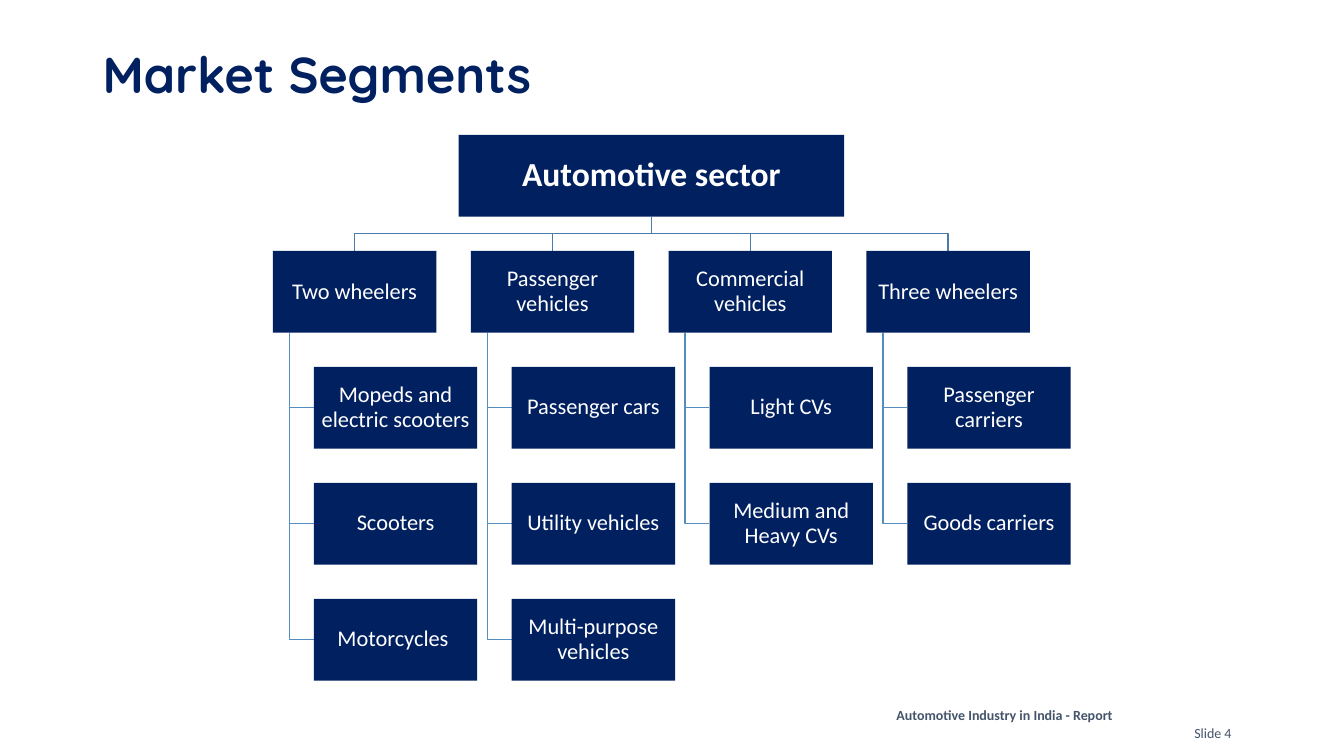
import pptx
import pptx.dml.color
import pptx.enum.shapes
import pptx.enum.text
import pptx.util

Pt = pptx.util.Pt
RGBColor = pptx.dml.color.RGBColor
ALIGN = pptx.enum.text.PP_ALIGN
ANCHOR = pptx.enum.text.MSO_ANCHOR

NAVY = RGBColor(0x00, 0x20, 0x60)
SLATE = RGBColor(0x44, 0x54, 0x6A)
WHITE = RGBColor(0xFF, 0xFF, 0xFF)
SECTOR_LINE = RGBColor(0x49, 0x7C, 0xAB)
SEGMENT_LINE = RGBColor(0x53, 0x8D, 0xC1)

SECTOR_WIDTH = 275.5
BOX_WIDTH = 116.7
BOX_HEIGHT = 58.3
FIRST_LEFT = 195
FIRST_TOP = 96.4
COLUMN_PITCH = 141.3
ROW_PITCH = 82.85
CHILD_INDENT = 29.2
TRUNK_INDENT = 11.7

SEGMENTS = [
    ("Two wheelers", ["Mopeds and electric scooters", "Scooters", "Motorcycles "]),
    ("Passenger vehicles", ["Passenger cars", "Utility vehicles", "Multi-purpose vehicles"]),
    ("Commercial vehicles", ["Light CVs", "Medium and Heavy CVs"]),
    ("Three wheelers", ["Passenger carriers", "Goods carriers"]),
]


def write(frame, text, size, color, bold=False, align=ALIGN.LEFT, font="Calibri", spacing=None):
    paragraph = frame.paragraphs[0]
    paragraph.alignment = align
    paragraph.line_spacing = spacing
    run = paragraph.add_run()
    run.text = text
    run.font.name = font
    run.font.size = Pt(size)
    run.font.bold = bold
    run.font.color.rgb = color


def add_label(slide, left, top, width, height, wrap=True):
    frame = slide.shapes.add_textbox(Pt(left), Pt(top), Pt(width), Pt(height)).text_frame
    frame.word_wrap = wrap
    return frame


def add_box(slide, left, top, width, text, size=16, bold=False, inset=0.8):
    box = slide.shapes.add_shape(
        pptx.enum.shapes.MSO_SHAPE.RECTANGLE, Pt(left), Pt(top), Pt(width), Pt(BOX_HEIGHT))
    box.shadow.inherit = False
    box.fill.solid()
    box.fill.fore_color.rgb = NAVY
    box.line.fill.background()
    frame = box.text_frame
    frame.word_wrap = True
    frame.vertical_anchor = ANCHOR.MIDDLE
    frame.margin_left = frame.margin_right = Pt(inset)
    frame.margin_top = frame.margin_bottom = Pt(inset)
    write(frame, text, size, WHITE, bold, ALIGN.CENTER, spacing=0.9)


def add_branch(slide, points, color):
    start, *rest = [(Pt(x), Pt(y)) for x, y in points]
    builder = slide.shapes.build_freeform(*start)
    builder.add_line_segments(rest, close=False)
    branch = builder.convert_to_shape()
    branch.shadow.inherit = False
    branch.fill.background()
    branch.line.color.rgb = color
    branch.line.width = Pt(1)


def row_top(row):
    return FIRST_TOP + row * ROW_PITCH


def add_segment(slide, left, sector_center, segment, children):
    sector_bottom = FIRST_TOP + BOX_HEIGHT
    top = row_top(1)
    middle = (sector_bottom + top) / 2
    center = left + BOX_WIDTH / 2
    add_branch(slide, [(sector_center, sector_bottom), (sector_center, middle),
                       (center, middle), (center, top)], SECTOR_LINE)
    trunk = left + TRUNK_INDENT
    child_left = left + CHILD_INDENT
    for row, child in enumerate(children, start=2):
        child_middle = row_top(row) + BOX_HEIGHT / 2
        add_branch(slide, [(trunk, top + BOX_HEIGHT), (trunk, child_middle),
                           (child_left, child_middle)], SEGMENT_LINE)
        add_box(slide, child_left, row_top(row), BOX_WIDTH, child)
    add_box(slide, left, top, BOX_WIDTH, segment)


def add_hierarchy(slide):
    span = (len(SEGMENTS) - 1) * COLUMN_PITCH + BOX_WIDTH
    sector_center = FIRST_LEFT + span / 2
    for column, (segment, children) in enumerate(SEGMENTS):
        add_segment(slide, FIRST_LEFT + column * COLUMN_PITCH, sector_center, segment, children)
    add_box(slide, sector_center - SECTOR_WIDTH / 2, FIRST_TOP, SECTOR_WIDTH,
            "Automotive sector", size=24, bold=True, inset=1.2)


def main():
    deck = pptx.Presentation()
    deck.slide_width, deck.slide_height = Pt(960), Pt(540)
    slide = deck.slides.add_slide(deck.slide_layouts[6])

    report_name = add_label(slide, 564.5, 501.1, 306, 19.4)
    write(report_name, "Automotive Industry in India - Report", 10, SLATE, True, ALIGN.CENTER)
    slide_number = add_label(slide, 846, 514.1, 47.5, 19.4, wrap=False)
    write(slide_number, "Slide 4", 10, SLATE)
    title = add_label(slide, 66.2, 28.8, 828, 52.6)
    title.vertical_anchor = ANCHOR.MIDDLE
    write(title, "Market Segments", 36, NAVY, True, font="Quicksand", spacing=0.9)

    add_hierarchy(slide)
    deck.save("out.pptx")


if __name__ == "__main__":
    main()
